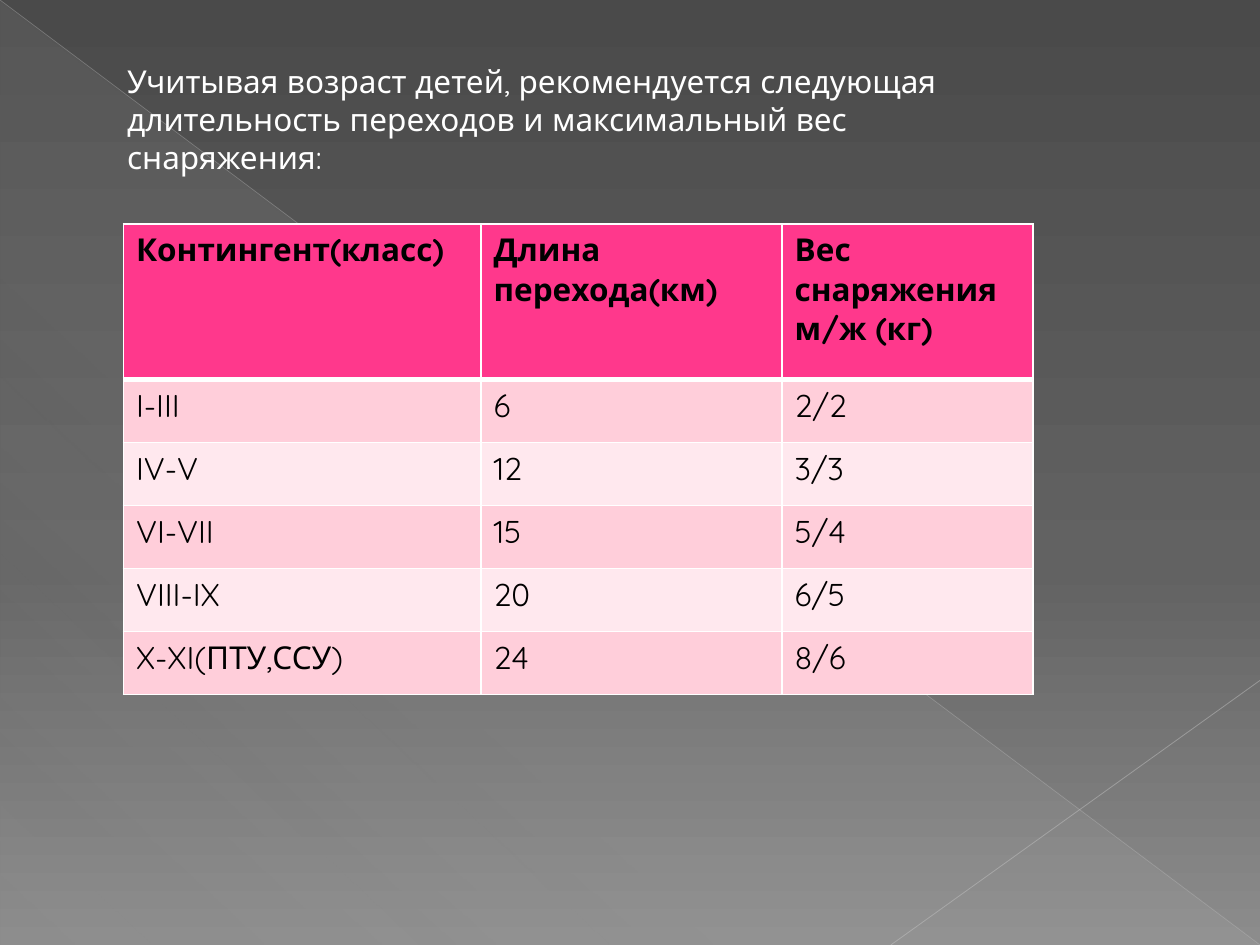
from lxml import etree
from pptx import Presentation
from pptx.dml.color import RGBColor
from pptx.enum.shapes import MSO_CONNECTOR, MSO_SHAPE
from pptx.oxml.ns import qn
from pptx.util import Inches, Pt

RIGHT_TRIANGLE = MSO_SHAPE.RIGHT_TRIANGLE
STRAIGHT = MSO_CONNECTOR.STRAIGHT

COLORS = {
    "white": "FFFFFF",
    "black": "000000",
    "dark": "4A4A4A",
    "middle": "626262",
    "light": "8C8C8C",
    "veil": "D2D2D2",
    "diagonal": "BFBFBF",
    "corner": "C6C6C6",
    "header": "FF388C",
    "odd": "FFCEDA",
    "even": "FFE8EE",
}

INTRO = (
    "Учитывая возраст детей, рекомендуется следующая "
    "длительность переходов и максимальный вес снаряжения:"
)
HIKING_NORMS = [
    ("Контингент(класс)", "Длина перехода(км)", "Вес снаряжения м/ж (кг)"),
    ("I-III", "6", "2/2"),
    ("IV-V", "12", "3/3"),
    ("VI-VII", "15", "5/4"),
    ("VIII-IX", "20", "6/5"),
    ("X-XI(ПТУ,ССУ)", "24", "8/6"),
]


def write_text(text_frame, text, font="Quicksand", size=18, color="black", bold=False):
    text_frame.word_wrap = True
    paragraph = text_frame.paragraphs[0]
    run = paragraph.add_run()
    run.text = text
    run.font.name = font
    run.font.size = Pt(size)
    run.font.bold = bold
    run.font.color.rgb = RGBColor.from_string(COLORS[color])


def add_color(parent, color, opacity=100):
    element = etree.SubElement(parent, qn("a:srgbClr"), val=COLORS[color])
    if opacity < 100:
        etree.SubElement(element, qn("a:alpha"), val=str(opacity * 1000))


def set_gradient(owner, fill, stops, angle):
    fill.gradient()
    gradient = owner.find(".//" + qn("a:gradFill"))
    for child in list(gradient):
        gradient.remove(child)
    stop_list = etree.SubElement(gradient, qn("a:gsLst"))
    for position, color, opacity in stops:
        stop = etree.SubElement(stop_list, qn("a:gs"), pos=str(position * 1000))
        add_color(stop, color, opacity)
    etree.SubElement(gradient, qn("a:lin"), ang=str(angle * 60000), scaled="0")


def set_borders(cell, **widths):
    properties = cell._tc.get_or_add_tcPr()
    for side in "LRTB":
        width = Pt(widths.get(side, 1))
        line = etree.SubElement(properties, qn(f"a:ln{side}"), w=str(width))
        add_color(etree.SubElement(line, qn("a:solidFill")), "white")


class SlideBuilder:
    def __init__(self, presentation):
        self.width = presentation.slide_width
        self.height = presentation.slide_height
        self.slide = presentation.slides.add_slide(presentation.slide_layouts[6])

    def place(self, left, top, *size):
        scales = (self.width, self.height) * 2
        return [round(share * scale) for share, scale in zip((left, top, *size), scales)]

    def background(self, stops, angle):
        set_gradient(self.slide.element, self.slide.background.fill, stops, angle)

    def gradient_shape(self, kind, box, stops, angle):
        shape = self.slide.shapes.add_shape(kind, *self.place(*box))
        shape.shadow.inherit = False
        shape.line.fill.background()
        set_gradient(shape.element, shape.fill, stops, angle)

    def line(self, start, end, color, width, opacity):
        ends = self.place(*start) + self.place(*end)
        connector = self.slide.shapes.add_connector(STRAIGHT, *ends)
        connector.line.width = Pt(width)
        connector.line.color.rgb = RGBColor.from_string(COLORS[color])
        tint = connector.element.spPr.find(".//" + qn("a:srgbClr"))
        etree.SubElement(tint, qn("a:alpha"), val=str(opacity * 1000))
        etree.SubElement(connector.element.spPr, qn("a:effectLst"))

    def text(self, box, text, **style):
        shape = self.slide.shapes.add_textbox(*self.place(*box))
        write_text(shape.text_frame, text, **style)

    def table(self, box, rows, column_shares, header_share):
        left, top, width, height = self.place(*box)
        frame = self.slide.shapes.add_table(
            len(rows), len(rows[0]), left, top, width, height
        )
        table = frame.table
        for column, share in zip(table.columns, column_shares):
            column.width = round(width * share)
        body_share = (1 - header_share) / (len(rows) - 1)
        for index, values in enumerate(rows):
            is_header = index == 0
            table.rows[index].height = round(
                height * (header_share if is_header else body_share)
            )
            fill = "header" if is_header else ("even", "odd")[index % 2]
            for column, value in enumerate(values):
                cell = table.cell(index, column)
                set_borders(cell, T=3 if index == 1 else 1, B=3 if is_header else 1)
                cell.fill.solid()
                cell.fill.fore_color.rgb = RGBColor.from_string(COLORS[fill])
                write_text(cell.text_frame, value, bold=is_header)


def main():
    presentation = Presentation()
    presentation.slide_width = Inches(10)
    presentation.slide_height = Inches(7.5)
    builder = SlideBuilder(presentation)
    builder.background(
        [(0, "dark", 100), (60, "middle", 100), (100, "light", 100)], 90
    )
    builder.gradient_shape(
        RIGHT_TRIANGLE,
        (0, 0, 1, 1),
        [(0, "veil", 10), (70, "veil", 8), (100, "veil", 1)],
        133,
    )
    builder.line((0, 0), (1, 1), "diagonal", 0.39, 35)
    builder.line((1, 0.72), (0.707, 1), "corner", 0.47, 45)
    builder.table(
        (0.098, 0.237, 0.722, 0.498), HIKING_NORMS, (0.393, 0.331, 0.276), 0.33
    )
    builder.text((0.091, 0.059, 0.732, 0.135), INTRO, color="white")
    presentation.save("out.pptx")


if __name__ == "__main__":
    main()
